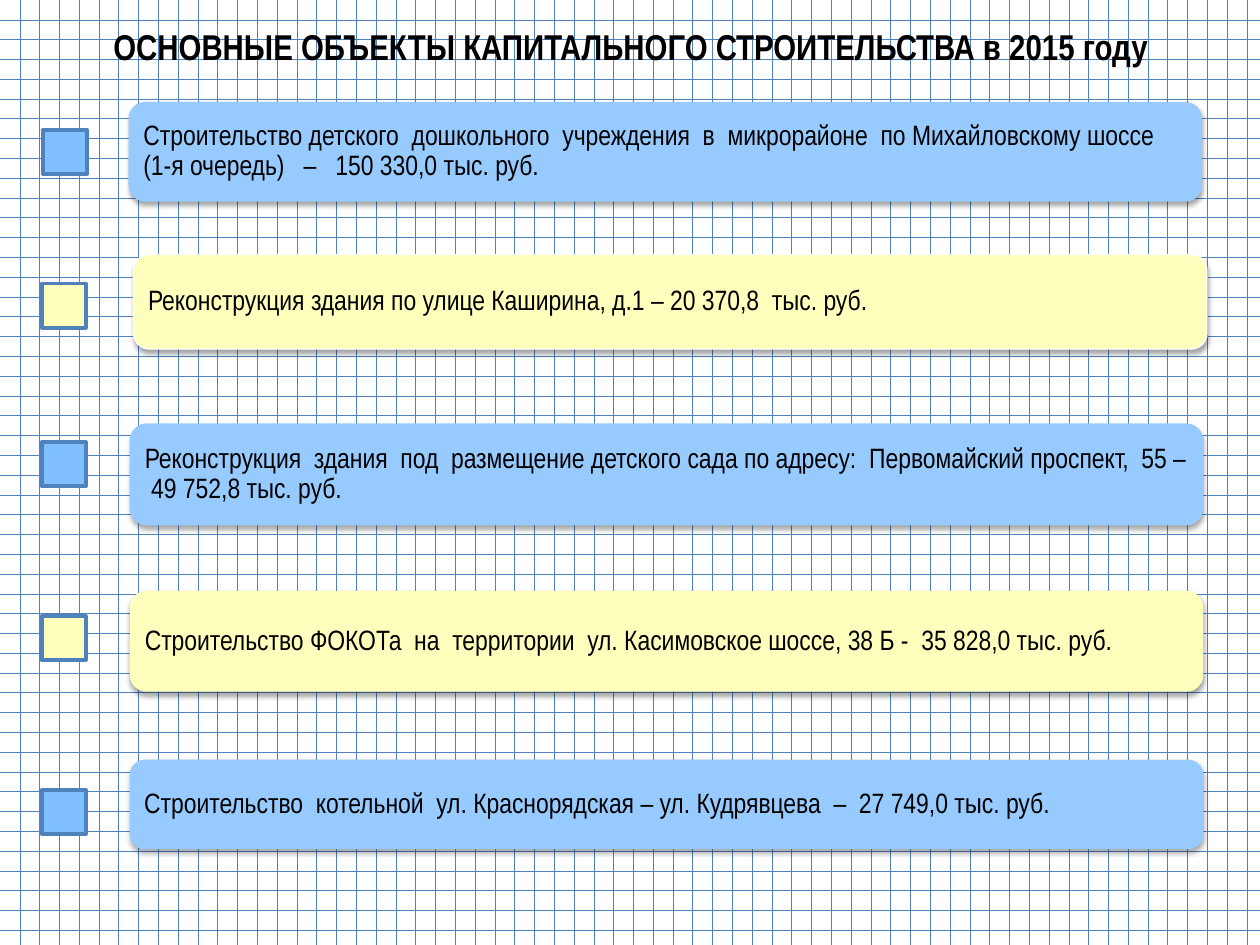
from lxml import etree
from pptx import Presentation
from pptx.dml.color import RGBColor
from pptx.enum import dml, shapes, text
from pptx.oxml.ns import qn
from pptx.util import Inches, Pt

FONT = "Arial Narrow"
BLACK = RGBColor(0x00, 0x00, 0x00)
WHITE = RGBColor(0xFF, 0xFF, 0xFF)
GRID_BLUE = RGBColor(0x4F, 0x81, 0xBD)
PANEL_BLUE = RGBColor(0x97, 0xCB, 0xFF)
MARKER_BLUE = RGBColor(0x81, 0xC0, 0xFF)
YELLOW = RGBColor(0xFF, 0xFF, 0xBD)

TITLE = "ОСНОВНЫЕ ОБЪЕКТЫ КАПИТАЛЬНОГО СТРОИТЕЛЬСТВА в 2015 году"
PANEL_WIDTH = 8.52
MARKER_SIZE = 0.35

# Panel left, top, height; marker left, top; text
PROJECTS = [
    (1.02, 0.81, 0.79, 0.34, 1.03,
     "Строительство детского  дошкольного  учреждения  в  микрорайоне  "
     "по Михайловскому шоссе (1-я очередь)   –   150 330,0 тыс. руб."),
    (1.06, 2.02, 0.75, 0.33, 2.25,
     "Реконструкция здания по улице Каширина, д.1 – 20 370,8  тыс. руб."),
    (1.03, 3.36, 0.81, 0.33, 3.51,
     "Реконструкция  здания  под  размещение детского сада по адресу:  "
     "Первомайский проспект,  55 –  49 752,8 тыс. руб."),
    (1.03, 4.69, 0.8, 0.33, 4.89,
     "Строительство ФОКОТа  на  территории  ул. Касимовское шоссе, 38 Б -  "
     "35 828,0 тыс. руб."),
    (1.03, 6.03, 0.71, 0.33, 6.27,
     "Строительство  котельной  ул. Краснорядская – ул. Кудрявцева  –  "
     "27 749,0 тыс. руб."),
]
OUTLINED_PANEL = 1


def set_background(slide):
    fill = slide.background.fill
    fill.patterned()
    fill.pattern = dml.MSO_PATTERN.DOTTED_GRID
    fill.fore_color.rgb = GRID_BLUE
    fill.back_color.rgb = WHITE


def write_text(shape, content, size, alignment, bold=False):
    frame = shape.text_frame
    frame.word_wrap = True
    frame.vertical_anchor = text.MSO_ANCHOR.MIDDLE
    paragraph = frame.paragraphs[0]
    paragraph.text = content
    paragraph.alignment = alignment
    font = paragraph.font
    font.name, font.size, font.bold = FONT, Pt(size), bold
    font.color.rgb = BLACK
    return frame


def add_title(slide):
    box = slide.shapes.add_textbox(
        Inches(0.51), Inches(0.13), Inches(9), Inches(0.47))
    write_text(box, TITLE, 20.5, text.PP_ALIGN.CENTER, bold=True)


def add_filled_shape(slide, preset, left, top, width, height, color):
    shape = slide.shapes.add_shape(
        preset, Inches(left), Inches(top), Inches(width), Inches(height))
    shape.fill.solid()
    shape.fill.fore_color.rgb = color
    shape.shadow.inherit = False
    return shape


def set_outline(shape, color, width):
    shape.line.color.rgb = color
    shape.line.width = Pt(width)


def add_soft_shadow(shape):
    effects = shape._element.spPr.find(qn("a:effectLst"))
    shadow = etree.SubElement(
        effects, qn("a:outerShdw"), blurRad=str(Pt(3.1)), dist=str(Pt(1.8)),
        dir="5400000", rotWithShape="0")
    color = etree.SubElement(shadow, qn("a:srgbClr"), val=str(BLACK))
    etree.SubElement(color, qn("a:alpha"), val="35000")


def add_panel(slide, left, top, height, color, content, outlined):
    panel = add_filled_shape(
        slide, shapes.MSO_SHAPE.ROUNDED_RECTANGLE,
        left, top, PANEL_WIDTH, height, color)
    if outlined:
        set_outline(panel, WHITE, 0.75)
    else:
        panel.line.fill.background()
    add_soft_shadow(panel)
    frame = write_text(panel, content, 16, text.PP_ALIGN.LEFT)
    frame.margin_left = frame.margin_right = Inches(0.08)
    frame.paragraphs[0].line_spacing = 0.9


def add_marker(slide, left, top, color):
    marker = add_filled_shape(
        slide, shapes.MSO_SHAPE.RECTANGLE,
        left, top, MARKER_SIZE, MARKER_SIZE, color)
    set_outline(marker, GRID_BLUE, 2.25)


def main():
    presentation = Presentation()
    presentation.slide_width = Inches(10)
    presentation.slide_height = Inches(7.5)
    slide = presentation.slides.add_slide(presentation.slide_layouts[6])
    set_background(slide)
    add_title(slide)
    for index, project in enumerate(PROJECTS):
        left, top, height, marker_left, marker_top, content = project
        yellow = index % 2 == 1
        add_panel(slide, left, top, height, YELLOW if yellow else PANEL_BLUE,
                  content, index == OUTLINED_PANEL)
        add_marker(slide, marker_left, marker_top,
                   YELLOW if yellow else MARKER_BLUE)
    presentation.save("out.pptx")


if __name__ == "__main__":
    main()
